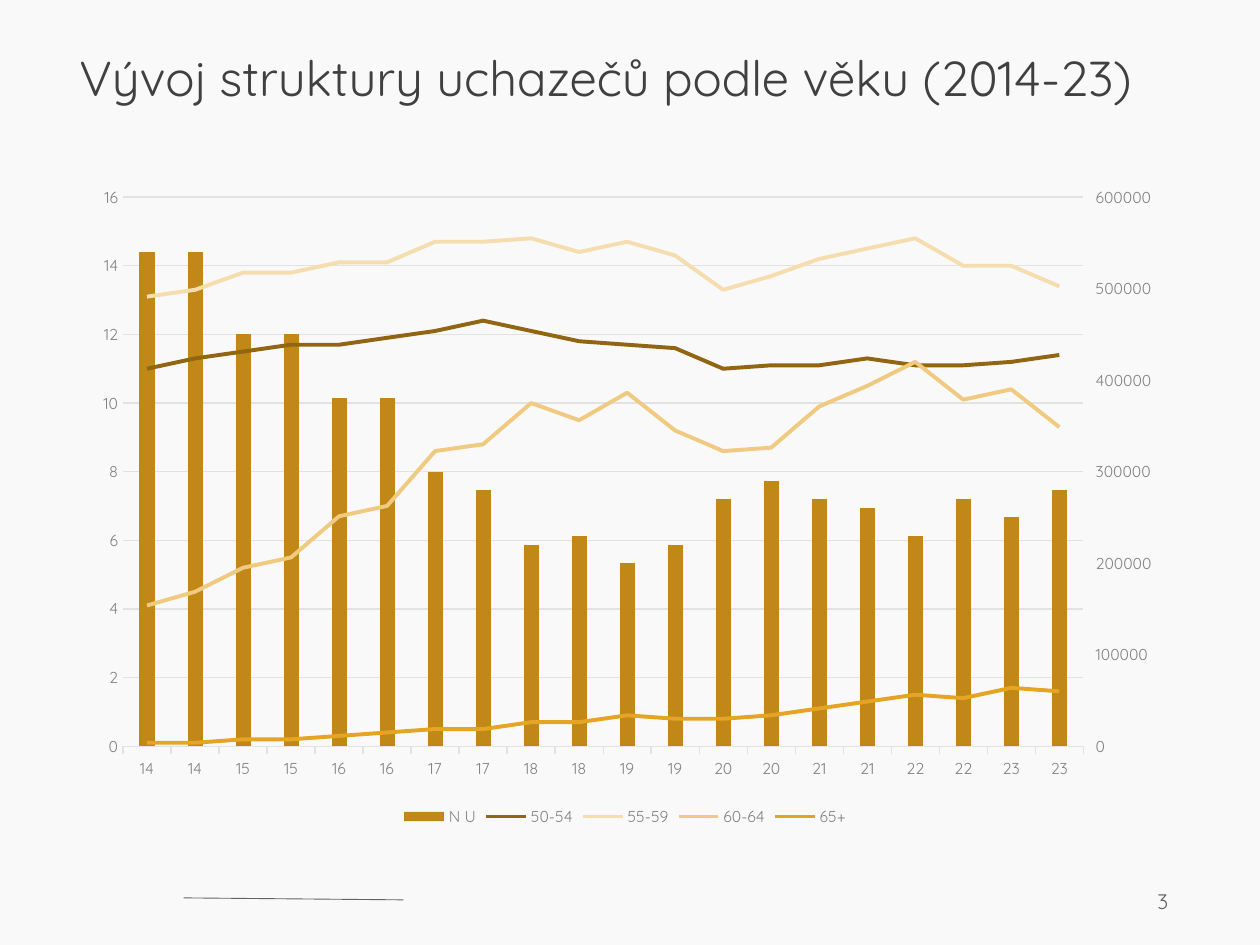
from copy import deepcopy

from lxml import etree
from pptx import Presentation
from pptx import util as u
from pptx.chart.data import CategoryChartData
from pptx.dml.color import RGBColor
from pptx.enum import chart as charts, shapes, text
from pptx.oxml.ns import qn

FONT = "Quicksand"
BACKGROUND = RGBColor(0xF9, 0xF9, 0xF9)
DARK = RGBColor(0x40, 0x40, 0x40)
GRAY = RGBColor(0x63, 0x63, 0x63)
LABEL = RGBColor(0x83, 0x83, 0x83)
GRID = RGBColor(0xE2, 0xE2, 0xE2)

TITLE = "Vývoj struktury uchazečů podle věku (2014-23)"
PAGE = "3"
YEARS = [str(year) for year in range(14, 24) for half in range(2)]
APPLICANTS = ("N U", RGBColor(0xC1, 0x87, 0x17), [
    540000, 540000, 450000, 450000, 380000, 380000, 300000, 280000, 220000, 230000,
    200000, 220000, 270000, 290000, 270000, 260000, 230000, 270000, 250000, 280000])
AGE_SHARES = [
    ("50-54", RGBColor(0x91, 0x65, 0x11), [
        11, 11.3, 11.5, 11.7, 11.7, 11.9, 12.1, 12.4, 12.1, 11.8,
        11.7, 11.6, 11, 11.1, 11.1, 11.3, 11.1, 11.1, 11.2, 11.4]),
    ("55-59", RGBColor(0xF5, 0xDD, 0xAF), [
        13.1, 13.3, 13.8, 13.8, 14.1, 14.1, 14.7, 14.7, 14.8, 14.4,
        14.7, 14.3, 13.3, 13.7, 14.2, 14.5, 14.8, 14, 14, 13.4]),
    ("60-64", RGBColor(0xF0, 0xCA, 0x81), [
        4.1, 4.5, 5.2, 5.5, 6.7, 7, 8.6, 8.8, 10, 9.5,
        10.3, 9.2, 8.6, 8.7, 9.9, 10.5, 11.2, 10.1, 10.4, 9.3]),
    ("65+", RGBColor(0xE5, 0xA4, 0x26), [
        0.1, 0.1, 0.2, 0.2, 0.3, 0.4, 0.5, 0.5, 0.7, 0.7,
        0.9, 0.8, 0.8, 0.9, 1.1, 1.3, 1.5, 1.4, 1.7, 1.6]),
]
PLOT_LAYOUT = {"x": 0.04, "y": 0.03, "w": 0.88, "h": 0.84}


def set_font(font, size, color):
    font.name, font.size = FONT, u.Pt(size)
    font.color.rgb = color


def add_text(slide, box, content, size, color):
    frame = slide.shapes.add_textbox(*map(u.Cm, box)).text_frame
    frame.word_wrap = True
    paragraph = frame.paragraphs[0]
    paragraph.text = content
    set_font(paragraph.font, size, color)
    return frame, paragraph


def add_value(parent, tag, value):
    return etree.SubElement(parent, qn(tag), val=str(value))


def remove_children(parent, tag):
    for child in parent.findall(qn(tag)):
        parent.remove(child)


def style_axes(chart):
    years, shares = chart.category_axis, chart.value_axis
    for axis in (years, shares):
        set_font(axis.tick_labels.font, 9, LABEL)
        axis.minor_tick_mark = charts.XL_TICK_MARK.NONE
    years.major_tick_mark = charts.XL_TICK_MARK.OUTSIDE
    years.format.line.color.rgb = GRID
    years.format.line.width = u.Pt(0.75)
    shares.major_tick_mark = charts.XL_TICK_MARK.NONE
    shares.format.line.fill.background()
    shares.minimum_scale, shares.maximum_scale, shares.major_unit = 0, 16, 2
    shares.tick_labels.number_format = "General"
    shares.tick_labels.number_format_is_linked = False
    shares.major_gridlines.format.line.color.rgb = GRID
    shares.major_gridlines.format.line.width = u.Pt(0.75)


def split_into_bars_and_lines(chart):
    """Draw all series but the first as lines; give the bars their own right axis."""
    bars = chart.plots[0]._element
    area = bars.getparent()
    lines = etree.SubElement(area, qn("c:lineChart"))
    bars.addnext(lines)
    add_value(lines, "c:grouping", "standard")
    add_value(lines, "c:varyColors", 0)
    for series in bars.findall(qn("c:ser"))[1:]:
        remove_children(series, "c:invertIfNegative")
        lines.append(series)
    add_value(lines, "c:marker", 1)

    axes = [area.find(qn(tag)) for tag in ("c:catAx", "c:valAx")]
    copies = [deepcopy(axis) for axis in axes]
    for axis, twin, reference, number in zip(axes, copies, bars.findall(qn("c:axId")), (1001, 1002)):
        lines.append(deepcopy(reference))
        reference.set("val", str(number))
        twin.find(qn("c:axId")).set("val", str(number))
        twin.find(qn("c:crossAx")).set("val", str(2003 - number))
    axes[1].addnext(copies[1])
    copies[1].addnext(copies[0])

    hidden_years, counts = copies
    hidden_years.find(qn("c:delete")).set("val", "1")
    remove_children(counts, "c:majorGridlines")
    counts.find(qn("c:axPos")).set("val", "r")
    counts.find(qn("c:crosses")).set("val", "max")
    counts.find(qn("c:majorTickMark")).set("val", "out")
    counts.find(qn("c:majorUnit")).set("val", "100000")
    counts.find(qn("c:scaling")).find(qn("c:max")).set("val", "600000")


def set_plot_layout(chart):
    area = chart.plots[0]._element.getparent()
    remove_children(area, "c:layout")
    layout = etree.SubElement(area, qn("c:layout"))
    area.insert(0, layout)
    manual = etree.SubElement(layout, qn("c:manualLayout"))
    add_value(manual, "c:layoutTarget", "inner")
    for side in ("x", "y"):
        add_value(manual, f"c:{side}Mode", "edge")
    for side, value in PLOT_LAYOUT.items():
        add_value(manual, f"c:{side}", value)


def add_age_chart(slide):
    data = CategoryChartData()
    data.categories = YEARS
    for name, _, values in [APPLICANTS, *AGE_SHARES]:
        data.add_series(name, values)
    chart = slide.shapes.add_chart(
        charts.XL_CHART_TYPE.COLUMN_CLUSTERED,
        u.Cm(1.6), u.Cm(3.58), u.Cm(22), u.Cm(13.18), data).chart
    set_font(chart.font, 10, DARK)
    chart.has_title = False
    chart.has_legend = True
    chart.legend.position = charts.XL_LEGEND_POSITION.BOTTOM
    chart.legend.include_in_layout = False
    set_font(chart.legend.font, 9, LABEL)
    style_axes(chart)
    split_into_bars_and_lines(chart)
    set_plot_layout(chart)

    bars, lines = chart.plots
    bars.gap_width = 219
    bars.vary_by_categories = False
    bars.series[0].format.fill.solid()
    bars.series[0].format.fill.fore_color.rgb = APPLICANTS[1]
    for series, (_, color, _) in zip(lines.series, AGE_SHARES):
        series.smooth = False
        series.marker.style = charts.XL_MARKER_STYLE.NONE
        series.format.line.color.rgb = color
        series.format.line.width = u.Pt(2.25)


def main():
    presentation = Presentation()
    presentation.slide_width, presentation.slide_height = u.Cm(25.4), u.Cm(19.05)
    slide = presentation.slides.add_slide(presentation.slide_layouts[6])
    slide.background.fill.solid()
    slide.background.fill.fore_color.rgb = BACKGROUND

    rule = slide.shapes.add_connector(
        shapes.MSO_CONNECTOR.STRAIGHT, u.Cm(3.7), u.Cm(18.1), u.Cm(8.13), u.Cm(18.14))
    rule.line.color.rgb = GRAY
    rule.line.width = u.Pt(0.5)
    etree.SubElement(rule._element.spPr, qn("a:effectLst"))

    frame, paragraph = add_text(slide, (18.08, 17.66, 5.72, 1.02), PAGE, 12, GRAY)
    frame.vertical_anchor = text.MSO_ANCHOR.MIDDLE
    paragraph.alignment = text.PP_ALIGN.RIGHT

    frame, paragraph = add_text(slide, (1.6, 1.19, 22.2, 1.02), TITLE, 28, DARK)
    frame.margin_left = frame.margin_right = frame.margin_top = frame.margin_bottom = 0
    paragraph.line_spacing = 0.8

    add_age_chart(slide)
    presentation.save("out.pptx")


if __name__ == "__main__":
    main()
